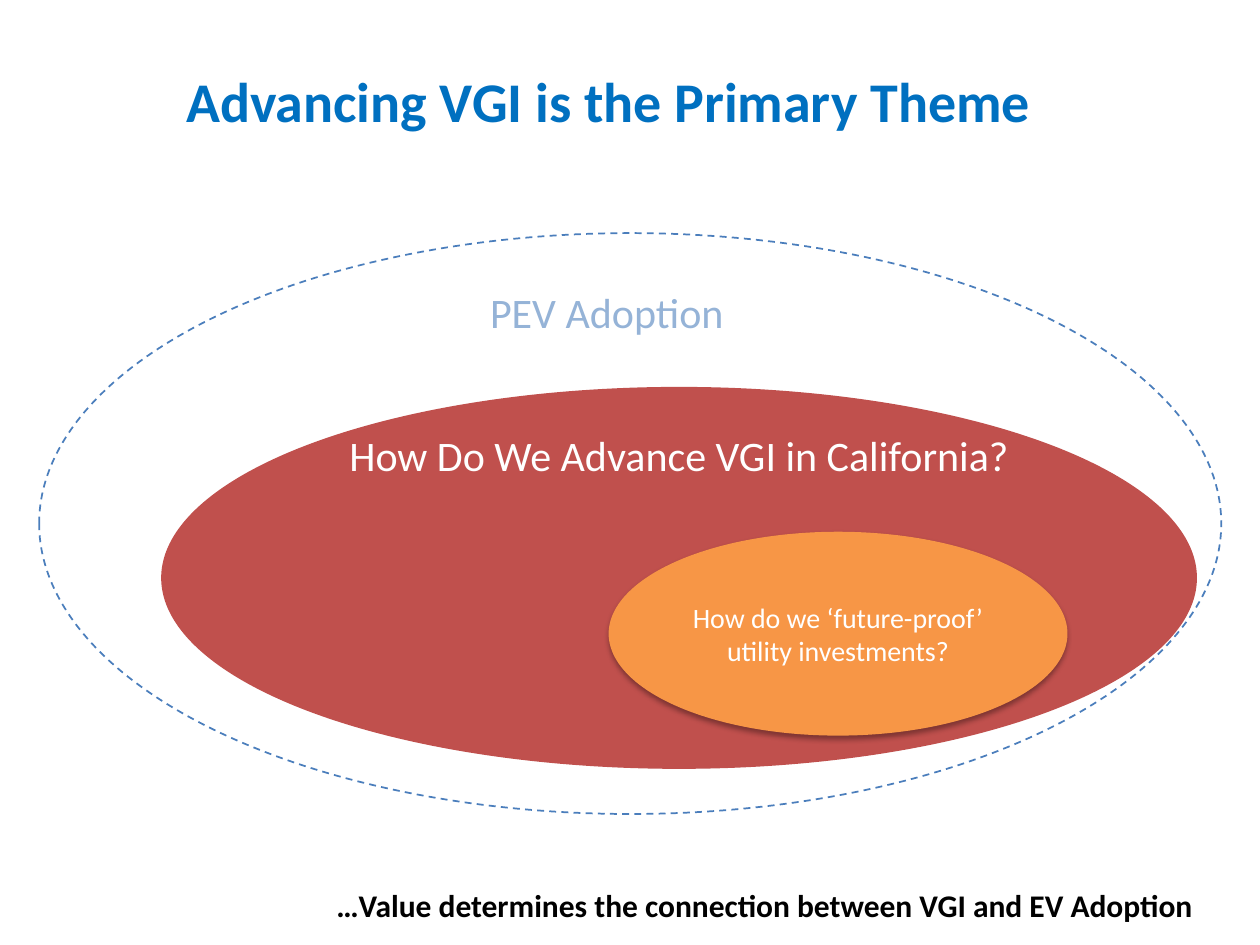
from lxml import etree
from pptx import Presentation
from pptx import util as u
from pptx.dml.color import RGBColor
from pptx.enum import dml, shapes, text
from pptx.oxml import ns

RED = RGBColor(0xC0, 0x50, 0x4D)
ORANGE = RGBColor(0xF7, 0x96, 0x46)
OUTLINE_BLUE = RGBColor(0x4B, 0x7E, 0xBC)
PALE_BLUE = RGBColor(0x95, 0xB3, 0xD7)
TITLE_BLUE = RGBColor(0x00, 0x70, 0xC0)
WHITE = RGBColor(0xFF, 0xFF, 0xFF)
BLACK = RGBColor(0x00, 0x00, 0x00)


def write(shape, wording, size, color, bold=False, align=text.PP_ALIGN.CENTER):
    paragraph = shape.text_frame.paragraphs[0]
    paragraph.alignment = align
    run = paragraph.add_run()
    run.text = wording
    run.font.name = "Calibri"
    run.font.size = u.Pt(size)
    run.font.bold = bold
    run.font.color.rgb = color


def add_ellipse(slide, left, top, width, height, fill=None):
    ellipse = slide.shapes.add_shape(
        shapes.MSO_SHAPE.OVAL, u.Cm(left), u.Cm(top), u.Cm(width), u.Cm(height))
    ellipse.shadow.inherit = False
    if fill is None:
        ellipse.fill.background()
    else:
        ellipse.fill.solid()
        ellipse.fill.fore_color.rgb = fill
        ellipse.line.fill.background()
    ellipse.text_frame.word_wrap = True
    return ellipse


presentation = Presentation()
presentation.slide_width = u.Cm(25.4)
presentation.slide_height = u.Cm(19.05)
slide = presentation.slides.add_slide(presentation.slide_layouts[5])

advance = add_ellipse(slide, 3.25, 7.8, 20.88, 7.7, RED)
advance.text_frame.vertical_anchor = text.MSO_ANCHOR.TOP
advance.text_frame.margin_top = u.Cm(-0.27)
write(advance, "How Do We Advance VGI in California?", 24, WHITE)

future_proof = add_ellipse(slide, 12.27, 10.72, 9.25, 4.11, ORANGE)
future_proof.text_frame.vertical_anchor = text.MSO_ANCHOR.MIDDLE
write(future_proof, "How do we ‘future-proof’ utility investments?", 16, WHITE)
effects = future_proof.element.spPr.find(ns.qn("a:effectLst"))
shadow = etree.SubElement(
    effects, ns.qn("a:outerShdw"), blurRad=str(u.Pt(3.1)), dist=str(u.Pt(1.8)),
    dir="5400000", rotWithShape="0")
shadow_color = etree.SubElement(shadow, ns.qn("a:srgbClr"), val=str(BLACK))
etree.SubElement(shadow_color, ns.qn("a:alpha"), val="35000")

adoption = add_ellipse(slide, 0.79, 4.7, 23.83, 11.71)
adoption.line.color.rgb = OUTLINE_BLUE
adoption.line.width = u.Pt(1)
adoption.line.dash_style = dml.MSO_LINE.DASH

labels = [
    (6.53, 17.73, 18.06, 1.02,
     "…Value determines the connection between VGI and EV Adoption", 18, BLACK, True),
    (9.63, 5.66, 5.26, 1.27, "PEV Adoption", 24, PALE_BLUE, False),
]
for left, top, width, height, wording, size, color, bold in labels:
    label = slide.shapes.add_textbox(u.Cm(left), u.Cm(top), u.Cm(width), u.Cm(height))
    label.text_frame.word_wrap = False
    label.text_frame.auto_size = text.MSO_AUTO_SIZE.SHAPE_TO_FIT_TEXT
    write(label, wording, size, color, bold, text.PP_ALIGN.LEFT)

title = slide.shapes.title
title.left, title.top = u.Cm(0.84), u.Cm(0.43)
title.width, title.height = u.Cm(22.86), u.Cm(3.18)
title.text_frame.vertical_anchor = text.MSO_ANCHOR.MIDDLE
write(title, "Advancing VGI is the Primary Theme", 32, TITLE_BLUE, True)

presentation.save("out.pptx")
